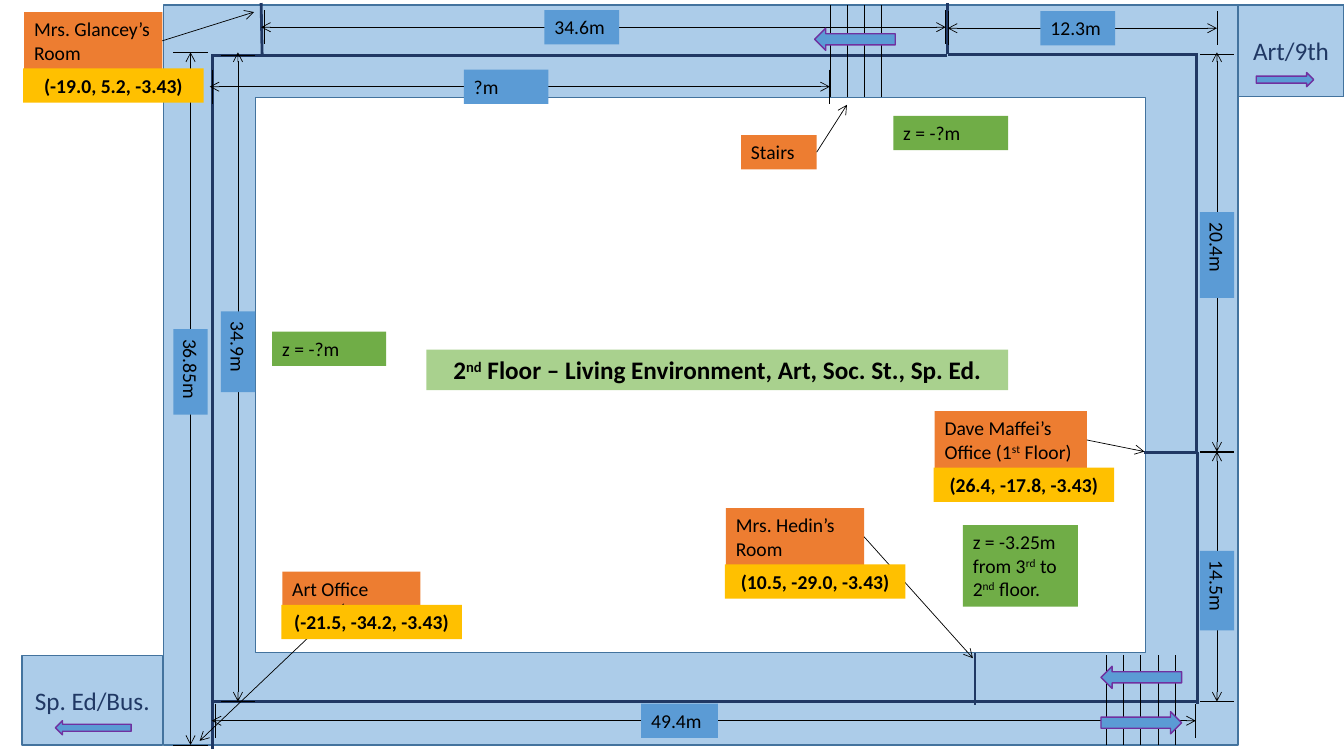
from dataclasses import dataclass

from lxml.etree import SubElement
from pptx import Presentation
from pptx.dml.color import RGBColor
from pptx.enum.shapes import MSO_CONNECTOR, MSO_SHAPE
from pptx.enum.text import MSO_ANCHOR, MSO_AUTO_SIZE, PP_ALIGN
from pptx.oxml.ns import qn
from pptx.util import Inches, Pt


@dataclass(frozen=True)
class Theme:
    font: str = "Calibri"
    blue: str = "5B9BD5"
    blue_edge: str = "43739E"
    navy: str = "203864"
    black: str = "000000"
    orange: str = "ED7D31"
    gold: str = "FFC000"
    green: str = "70AD47"
    pale_green: str = "A9D18E"
    purple: str = "7030A0"
    label_size: int = 14
    title_size: int = 18
    thin: float = 0.5
    edge: float = 1
    wall: float = 2


@dataclass(frozen=True)
class Box:
    left: float
    top: float
    width: float
    height: float

    @property
    def bottom(self):
        return self.top + self.height

    def inches(self):
        return [Inches(v) for v in (self.left, self.top, self.width, self.height)]


@dataclass(frozen=True)
class Dimension:
    """A measured span: the axis line's offset, its ends, and its label's middle and length."""
    label: str
    offset: float
    start: float
    end: float
    first_tick: float
    middle: float
    length: float
    vertical: bool = False


THEME = Theme()
LABEL_HEIGHT = 0.34

WALLS = [
    ((2.11, 0.55), (6.32, 0.55)),
    ((6.32, 0.55), (9.39, 0.55)),
    ((9.4, 0.03), (9.4, 0.54)),
    ((9.4, 0.54), (11.88, 0.54)),
    ((2.11, 0.54), (2.11, 7.43)),
    ((2.12, 6.96), (11.88, 6.96)),
    ((11.87, 0.54), (11.87, 4.48)),
    ((11.88, 4.48), (11.88, 6.98)),
    ((11.35, 4.49), (11.86, 4.49)),
    ((2.59, 0.03), (2.6, 0.55)),
    ((9.67, 6.99), (9.67, 6.48)),
]

DIMENSIONS = [
    Dimension("34.9m", 2.36, 0.52, 6.96, 0.55, 3.49, 0.8, True),
    Dimension("36.85m", 1.89, 0.52, 7.39, 0.52, 3.69, 0.85, True),
    Dimension("20.4m", 12.07, 0.52, 4.48, 0.54, 2.53, 0.85, True),
    Dimension("14.5m", 12.07, 4.48, 6.96, 4.49, 5.86, 0.79, True),
    Dimension("34.6m", 0.27, 2.59, 9.38, 2.62, 5.77, 0.74),
    Dimension("12.3m", 0.28, 9.4, 12.07, 9.41, 10.69, 0.74),
    Dimension("?m", 0.86, 2.08, 8.23, 2.11, 5.02, 0.84),
    Dimension("49.4m", 7.15, 2.1, 11.86, 2.14, 6.74, 0.76),
]


def rgb(color):
    return RGBColor.from_string(color)


def add_line(page, start, end, color=THEME.black, width=THEME.thin, heads=()):
    """Heads holds the ends that carry an arrow: headEnd, tailEnd."""
    line = page.shapes.add_connector(
        MSO_CONNECTOR.STRAIGHT, *[Inches(v) for v in (*start, *end)])
    line.line.color.rgb = rgb(color)
    line.line.width = Pt(width)
    properties = line._element.spPr
    for head in heads:
        SubElement(properties.find(qn("a:ln")), qn(f"a:{head}"), type="arrow")
    SubElement(properties, qn("a:effectLst"))
    return line


def add_block(page, kind, box, edge, see_through=False):
    shape = page.shapes.add_shape(kind, *box.inches())
    shape.shadow.inherit = False
    shape.fill.solid()
    shape.fill.fore_color.rgb = rgb(THEME.blue)
    if see_through:
        color = shape._element.spPr.find(qn("a:solidFill"))[0]
        SubElement(color, qn("a:alpha"), val="50000")
    shape.line.color.rgb = rgb(edge)
    shape.line.width = Pt(THEME.edge)
    return shape


def add_direction(page, box, kind):
    return add_block(page, kind, box, THEME.purple)


def write(frame, text, size, color=THEME.black, bold=False, align=PP_ALIGN.LEFT):
    """Fill the frame; pieces between ^ marks are superscript."""
    frame.word_wrap = True
    para = frame.paragraphs[0]
    para.alignment = align
    for index, piece in enumerate(text.split("^")):
        span = para.add_run()
        span.text = piece
        span.font.name = THEME.font
        span.font.size = Pt(size)
        span.font.bold = bold
        span.font.color.rgb = rgb(color)
        if index % 2:
            span._r.get_or_add_rPr().set("baseline", "30000")


def add_label(page, box, text, fill, size=THEME.label_size, **style):
    label = page.shapes.add_textbox(*box.inches())
    label.fill.solid()
    label.fill.fore_color.rgb = rgb(fill)
    write(label.text_frame, text, size, **style)
    label.text_frame.auto_size = MSO_AUTO_SIZE.SHAPE_TO_FIT_TEXT
    return label


def add_dimension(page, dim):
    def point(along, across):
        return (across, along) if dim.vertical else (along, across)

    half = LABEL_HEIGHT / 2
    add_line(page, point(dim.start, dim.offset), point(dim.end, dim.offset),
             heads=("headEnd", "tailEnd"))
    for tick in (dim.first_tick, dim.end):
        add_line(page, point(tick, dim.offset - half), point(tick, dim.offset + half))
    center_x, center_y = point(dim.middle, dim.offset)
    box = Box(center_x - dim.length / 2, center_y - half, dim.length, LABEL_HEIGHT)
    label = add_label(page, box, dim.label, THEME.blue)
    label.rotation = 90 if dim.vertical else 0


def add_stairs(page, box, steps, arrow_offset, kind):
    gap = box.width / (steps - 1)
    for step in range(steps):
        x = box.left + step * gap
        add_line(page, (x, box.top), (x, box.bottom))
    right, down = arrow_offset
    add_direction(page, Box(box.left + right, box.top + down, 0.8, 0.22), kind)


def add_wing(page, box, name, arrow, kind):
    """A neighbouring wing; arrow is placed from the wing's corner."""
    wing = add_block(page, MSO_SHAPE.RECTANGLE, box, THEME.blue_edge, see_through=True)
    wing.text_frame.vertical_anchor = MSO_ANCHOR.MIDDLE
    write(wing.text_frame, name, THEME.title_size, THEME.navy, align=PP_ALIGN.CENTER)
    add_direction(page, Box(box.left + arrow.left, box.top + arrow.top,
                            arrow.width, arrow.height), kind)


def add_callout(page, box, name, target, coordinates=None, start=None):
    """A named place; its leader leaves the right side unless a start is given."""
    label = add_label(page, box, name, THEME.orange)
    leader = add_line(page, start or target, target, heads=("tailEnd",))
    if start is None:
        leader.begin_connect(label, 3)
    if coordinates:
        add_label(page, Box(box.left - 0.01, box.bottom - 0.01, 1.79, LABEL_HEIGHT),
                  coordinates, THEME.gold, bold=True, align=PP_ALIGN.CENTER)


def add_floor_plan(page):
    left, right = MSO_SHAPE.LEFT_ARROW, MSO_SHAPE.RIGHT_ARROW
    add_block(page, MSO_SHAPE.FRAME, Box(1.62, 0.05, 10.66, 7.34),
              THEME.blue_edge, see_through=True)
    for start, end in WALLS:
        add_line(page, start, end, THEME.navy, THEME.wall)
    for dim in DIMENSIONS:
        add_dimension(page, dim)
    add_stairs(page, Box(8.24, 0.05, 0.5, 0.91), 4, (-0.16, 0.23), left)
    add_stairs(page, Box(10.97, 6.5, 0.69, 0.45), 5, (-0.05, 0.11), left)
    add_stairs(page, Box(10.97, 6.94, 0.69, 0.45), 5, (-0.05, 0.12), right)
    add_wing(page, Box(0.22, 6.5, 1.39, 0.89), "Sp. Ed/Bus.",
             Box(0.33, 0.65, 0.75, 0.14), left)
    add_wing(page, Box(12.28, 0.05, 1.05, 0.91), "Art/9th",
             Box(0.18, 0.67, 0.57, 0.14), right)


def add_annotations(page):
    add_label(page, Box(4.23, 3.47, 5.77, 0.4),
              "2^nd^ Floor – Living Environment, Art, Soc. St., Sp. Ed.",
              THEME.pale_green, THEME.title_size, bold=True, align=PP_ALIGN.CENTER)
    for box, text in [
        (Box(8.86, 1.15, 1.14, 0.34), "z = -?m"),
        (Box(2.7, 3.29, 1.13, 0.34), "z = -?m"),
        (Box(9.55, 5.21, 1.14, 0.81), "z = -3.25m from 3^rd^ to 2^nd^ floor."),
    ]:
        add_label(page, box, text, THEME.green)
    add_callout(page, Box(9.27, 4.08, 1.51, 0.57), "Dave Maffei’s Office (1^st^ Floor)",
                (11.35, 4.48), "(26.4, -17.8, -3.43)")
    add_callout(page, Box(2.8, 5.67, 1.37, 0.34), "Art Office",
                (1.98, 7.35), "(-21.5, -34.2, -3.43)", start=(3.41, 5.99))
    add_callout(page, Box(7.2, 5.04, 1.37, 0.57), "Mrs. Hedin’s Room",
                (9.65, 6.53), "(10.5, -29.0, -3.43)")
    add_callout(page, Box(0.24, 0.12, 1.37, 0.57), "Mrs. Glancey’s Room",
                (2.52, 0.12), "(-19.0, 5.2, -3.43)")
    add_callout(page, Box(7.35, 1.34, 0.75, 0.34), "Stairs", (8.4, 1.04))


def main():
    deck = Presentation()
    deck.slide_width, deck.slide_height = Inches(13.33), Inches(7.5)
    page = deck.slides.add_slide(deck.slide_layouts[6])
    add_floor_plan(page)
    add_annotations(page)
    deck.save("out.pptx")


if __name__ == "__main__":
    main()
